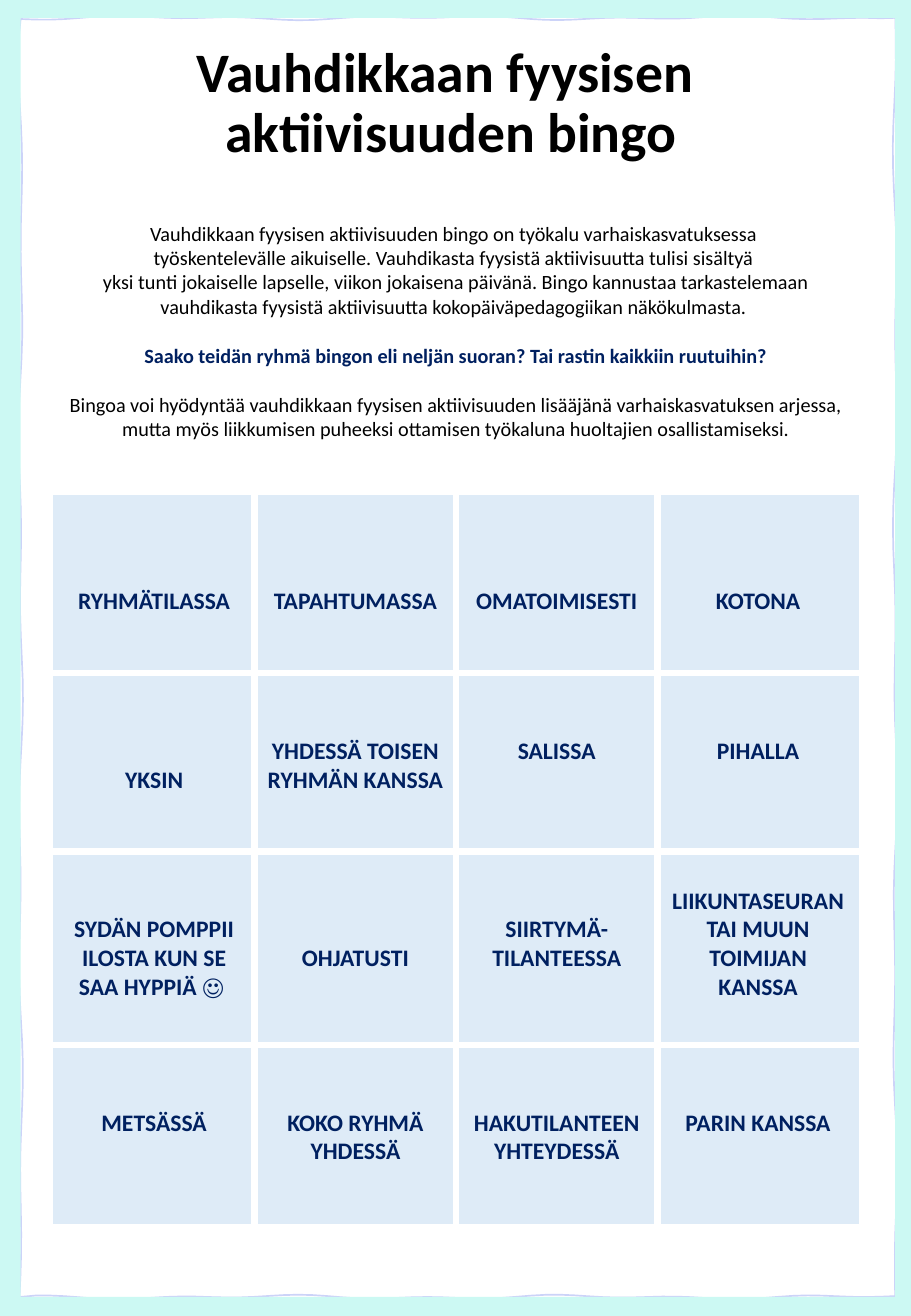
from dataclasses import dataclass
from math import pi, sin
from typing import NamedTuple

from lxml import etree
from pptx import Presentation
from pptx.dml.color import RGBColor
from pptx.enum.text import MSO_ANCHOR, MSO_AUTO_SIZE, PP_ALIGN
from pptx.oxml.ns import qn
from pptx.util import Inches, Pt

CENTER = PP_ALIGN.CENTER
TOP, MIDDLE = MSO_ANCHOR.TOP, MSO_ANCHOR.MIDDLE
GROW = MSO_AUTO_SIZE.SHAPE_TO_FIT_TEXT
TITLE_ONLY = 5
PAGE_WIDTH, PAGE_HEIGHT = Inches(7.5), Inches(10.83)


@dataclass(frozen=True)
class Theme:
    """Colours, font and type sizes of the bingo sheet."""
    font: str = "Calibri"
    ink: str = "000000"
    navy: str = "002060"
    tile: str = "DEEBF7"
    gap: str = "FFFFFF"
    mint: str = "CCF9F3"
    lavender: str = "CCD3F8"
    title_size: float = 33
    body_size: float = 12
    tile_size: float = 14
    gap_width: float = 4.5
    line_height: float = 1.22


THEME = Theme()


class Box(NamedTuple):
    """A rectangle in slide units."""
    left: int
    top: int
    width: int
    height: int


def percent_box(left, top, width, height):
    """Return a box given in percent of the slide's size."""
    return Box(round(PAGE_WIDTH * left / 100), round(PAGE_HEIGHT * top / 100),
               round(PAGE_WIDTH * width / 100), round(PAGE_HEIGHT * height / 100))


TITLE = "Vauhdikkaan fyysisen \vaktiivisuuden bingo"
INTRO = [
    ("Vauhdikkaan fyysisen aktiivisuuden bingo on työkalu varhaiskasvatuksessa ", False, False),
    ("työskentelevälle aikuiselle. Vauhdikasta fyysistä aktiivisuutta tulisi sisältyä ",
     False, False),
    ("yksi tunti jokaiselle lapselle, viikon jokaisena päivänä. Bingo kannustaa "
     "tarkastelemaan vauhdikasta fyysistä aktiivisuutta kokopäiväpedagogiikan "
     "näkökulmasta. ", False, False),
    ("Saako teidän ryhmä bingon eli neljän suoran? Tai rastin kaikkiin ruutuihin?",
     True, True),
    ("Bingoa voi hyödyntää vauhdikkaan fyysisen aktiivisuuden lisääjänä "
     "varhaiskasvatuksen arjessa, mutta myös liikkumisen puheeksi ottamisen työkaluna "
     "huoltajien osallistamiseksi.", False, True),
]
TILES = [
    [("RYHMÄTILASSA", 3), ("TAPAHTUMASSA", 3), ("OMATOIMISESTI", 3), ("KOTONA", 3)],
    [("YKSIN", 3), ("YHDESSÄ TOISEN RYHMÄN KANSSA", 2), ("SALISSA", 2), ("PIHALLA", 2)],
    [("SYDÄN POMPPII ILOSTA KUN SE SAA HYPPIÄ ☺ ", 2), ("OHJATUSTI", 3),
     ("SIIRTYMÄ- TILANTEESSA", 2), ("LIIKUNTASEURAN TAI MUUN TOIMIJAN KANSSA", 1)],
    [("METSÄSSÄ", 2), ("KOKO RYHMÄ YHDESSÄ", 2), ("HAKUTILANTEEN YHTEYDESSÄ", 2),
     ("PARIN KANSSA", 2)],
]
ROW_HEIGHTS = [1.47, 1.47, 1.59, 1.47]


def style(para, size, color, bold):
    """Centre a paragraph and set its font."""
    para.alignment = CENTER
    para.font.name = THEME.font
    para.font.size = Pt(size)
    para.font.bold = bold
    para.font.color.rgb = RGBColor.from_string(color)


def place(shape, box):
    """Move a shape into a box."""
    shape.left, shape.top, shape.width, shape.height = box


def outline(box, wave, steps, phase):
    """Return the corner-to-corner points of a box whose sides waver by wave."""
    corners = [(box.left, box.top), (box.left + box.width, box.top),
               (box.left + box.width, box.top + box.height), (box.left, box.top + box.height)]
    points = []
    for side, (x, y) in enumerate(corners):
        next_x, next_y = corners[(side + 1) % 4]
        for step in range(steps):
            share = step / steps
            swing = wave * (sin(6 * pi * share + phase + side) + sin(14 * pi * share)) / 2
            across, down = (0, swing) if side % 2 == 0 else (swing, 0)
            points.append((round(x + (next_x - x) * share + across),
                           round(y + (next_y - y) * share + down)))
    return points


def add_ring(slide, outer, inner):
    """Draw an outer and an inner closed outline as one shape."""
    builder = slide.shapes.build_freeform(*outer[0])
    builder.add_line_segments(outer[1:], close=True)
    hole = inner[::-1]
    builder.move_to(*hole[0])
    builder.add_line_segments(hole[1:], close=True)
    ring = builder.convert_to_shape()
    ring.shadow.inherit = False
    return ring


def add_border(slide, outer, inner):
    """Draw the mint border with wavering lavender edges."""
    edges = add_ring(slide, outline(outer, Inches(0.02), 60, 0),
                     outline(inner, Inches(0.02), 60, 2))
    edges.fill.background()
    edges.line.color.rgb = RGBColor.from_string(THEME.lavender)
    edges.line.width = Pt(1)
    band = add_ring(slide, outline(outer, 0, 1, 0), outline(inner, 0, 1, 0))
    band.fill.solid()
    band.fill.fore_color.rgb = RGBColor.from_string(THEME.mint)
    band.line.fill.background()


def add_title(slide, box):
    """Fill and place the title placeholder."""
    title = slide.shapes.title
    place(title, box)
    frame = title.text_frame
    frame.text = TITLE
    frame.word_wrap = True
    frame.vertical_anchor = MIDDLE
    para = frame.paragraphs[0]
    style(para, THEME.title_size, THEME.ink, True)
    para.line_spacing = 0.9


def add_intro(slide, box):
    """Write the introduction with one line of space between its parts."""
    frame = slide.shapes.add_textbox(*box).text_frame
    frame.word_wrap = True
    frame.auto_size = GROW
    for index, (text, strong, spaced) in enumerate(INTRO):
        para = frame.add_paragraph() if index else frame.paragraphs[0]
        para.text = text
        style(para, THEME.body_size, THEME.navy if strong else THEME.ink, strong)
        if spaced:
            para.space_before = Pt(THEME.body_size * THEME.line_height)


def set_edge(cell, tag, visible):
    """Draw one cell border as a white gap, or leave it out."""
    edge = etree.SubElement(cell._tc.get_or_add_tcPr(), qn(tag),
                            w=str(Pt(THEME.gap_width)))
    if visible:
        fill = etree.SubElement(edge, qn("a:solidFill"))
        etree.SubElement(fill, qn("a:srgbClr"), val=THEME.gap)
    else:
        etree.SubElement(edge, qn("a:noFill"))


def add_bingo(slide, box):
    """Build the bingo table, lowering each text by its number of lines."""
    rows, columns = len(TILES), len(TILES[0])
    table = slide.shapes.add_table(rows, columns, *box).table
    table.first_row = table.horz_banding = False
    for column in table.columns:
        column.width = box.width // columns
    for row_index, row in enumerate(TILES):
        table.rows[row_index].height = round(
            box.height * ROW_HEIGHTS[row_index] / sum(ROW_HEIGHTS))
        for column_index, (text, lines) in enumerate(row):
            cell = table.cell(row_index, column_index)
            cell.text = text
            cell.vertical_anchor = TOP
            cell.margin_top = Inches(0.05) + Pt(lines * THEME.tile_size * THEME.line_height)
            style(cell.text_frame.paragraphs[0], THEME.tile_size, THEME.navy, True)
            set_edge(cell, "a:lnL", column_index > 0)
            set_edge(cell, "a:lnR", column_index < columns - 1)
            set_edge(cell, "a:lnT", row_index > 0)
            set_edge(cell, "a:lnB", row_index < rows - 1)
            cell.fill.solid()
            cell.fill.fore_color.rgb = RGBColor.from_string(THEME.tile)


def main():
    """Build and save the bingo sheet."""
    deck = Presentation()
    deck.slide_width, deck.slide_height = PAGE_WIDTH, PAGE_HEIGHT
    slide = deck.slides.add_slide(deck.slide_layouts[TITLE_ONLY])
    add_title(slide, percent_box(5.87, 2.77, 87.33, 10.34))
    add_bingo(slide, percent_box(5.87, 37.58, 88.4, 55.4))
    add_intro(slide, percent_box(5.87, 16.34, 88.4, 17.73))
    add_border(slide, percent_box(0, 0, 100, 100), percent_box(2.27, 1.36, 96, 97.2))
    deck.save("out.pptx")


if __name__ == "__main__":
    main()
